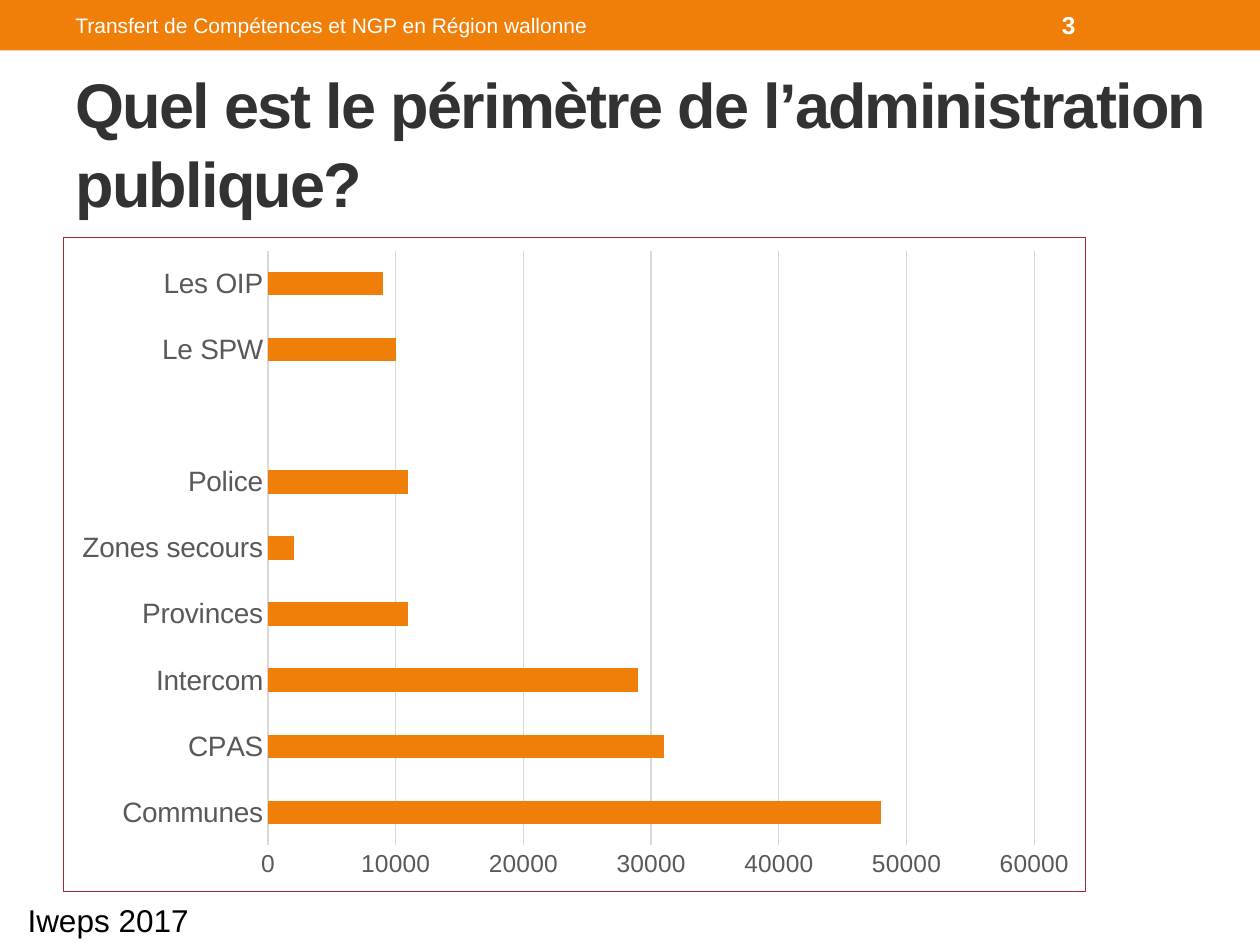
import dataclasses

import lxml.etree
import pptx
import pptx.chart.chart
import pptx.chart.data
import pptx.dml.color
import pptx.enum.chart
import pptx.enum.shapes
import pptx.enum.text
import pptx.oxml
import pptx.oxml.ns
import pptx.slide
import pptx.util

Inches = pptx.util.Inches
Pt = pptx.util.Pt

FONT = "Arial"
ORANGE = "F07F09"
WHITE = "FFFFFF"
GREY = "595959"
GRID = "D9D9D9"
BORDER = "9F2936"


@dataclasses.dataclass(frozen=True)
class Area:
    """Place and size in inches."""

    left: float
    top: float
    width: float
    height: float

    def lengths(self) -> list[pptx.util.Length]:
        """Return the four measures as lengths."""
        return [Inches(value) for value in dataclasses.astuple(self)]


@dataclasses.dataclass(frozen=True)
class Staff:
    """One group of public employers and its head count."""

    label: str
    count: int | None


STAFF = [
    Staff("Communes", 48000),
    Staff("CPAS", 31000),
    Staff("Intercom", 29000),
    Staff("Provinces", 11000),
    Staff("Zones secours", 2000),
    Staff("Police", 11000),
    Staff("", None),
    Staff("Le SPW", 10000),
    Staff("Les OIP", 9000),
]


def color(value: str) -> pptx.dml.color.RGBColor:
    """Turn a hex string into a colour."""
    return pptx.dml.color.RGBColor.from_string(value)


def add_text(page: pptx.slide.Slide, area: Area, text: str, *, size: float,
             fill: str, bold: bool = False, middle: bool = True,
             tracking: float = 0, spacing: float = 1) -> None:
    """Add a text box with one formatted paragraph."""
    frame = page.shapes.add_textbox(*area.lengths()).text_frame
    frame.word_wrap = True
    anchors = pptx.enum.text.MSO_ANCHOR
    frame.vertical_anchor = anchors.MIDDLE if middle else anchors.TOP
    para = frame.paragraphs[0]
    para.line_spacing = spacing
    span = para.add_run()
    span.text = text
    span.font.name = FONT
    span.font.size = Pt(size)
    span.font.bold = bold
    span.font.color.rgb = color(fill)
    if tracking:
        span.font._element.set("spc", str(int(tracking * 100)))


def add_band(page: pptx.slide.Slide, area: Area) -> None:
    """Draw the coloured header band."""
    band = page.shapes.add_shape(
        pptx.enum.shapes.MSO_SHAPE.RECTANGLE, *area.lengths())
    band.shadow.inherit = False
    band.fill.solid()
    band.fill.fore_color.rgb = color(ORANGE)
    band.line.fill.background()


def style_axis(axis, size: float) -> None:
    """Set the labels of an axis and remove its ticks."""
    axis.major_tick_mark = pptx.enum.chart.XL_TICK_MARK.NONE
    axis.minor_tick_mark = pptx.enum.chart.XL_TICK_MARK.NONE
    font = axis.tick_labels.font
    font.name = FONT
    font.size = Pt(size)
    font.color.rgb = color(GREY)


def style_line(line, fill: str) -> None:
    """Give a line its colour and the common width."""
    line.color.rgb = color(fill)
    line.width = Pt(0.75)


def frame_chart(chart: pptx.chart.chart.Chart, plot: Area) -> None:
    """Add the chart border and place the plot by fractions of the chart."""
    names = pptx.oxml.ns.nsdecls("c", "a")
    body = chart._chartSpace.find(pptx.oxml.ns.qn("c:chart"))
    body.addnext(pptx.oxml.parse_xml(
        f'<c:spPr {names}><a:noFill/><a:ln w="{Pt(0.75)}"><a:solidFill>'
        f'<a:srgbClr val="{BORDER}"/></a:solidFill></a:ln></c:spPr>'))
    region = body.find(pptx.oxml.ns.qn("c:plotArea"))
    for old in region.findall(pptx.oxml.ns.qn("c:layout")):
        region.remove(old)
    layout = pptx.oxml.parse_xml(f"<c:layout {names}/>")
    manual = lxml.etree.SubElement(layout, pptx.oxml.ns.qn("c:manualLayout"))
    settings = {"layoutTarget": "inner", "xMode": "edge", "yMode": "edge",
                "x": plot.left, "y": plot.top, "w": plot.width, "h": plot.height}
    for name, value in settings.items():
        lxml.etree.SubElement(
            manual, pptx.oxml.ns.qn(f"c:{name}")).set("val", str(value))
    region.insert(0, layout)


def add_staff_chart(page: pptx.slide.Slide, area: Area) -> None:
    """Add the bar chart of head counts."""
    data = pptx.chart.data.CategoryChartData()
    data.categories = [staff.label for staff in STAFF]
    data.add_series("Series 1", [staff.count for staff in STAFF])
    chart = page.shapes.add_chart(
        pptx.enum.chart.XL_CHART_TYPE.BAR_CLUSTERED, *area.lengths(), data).chart
    chart.has_legend = False
    chart.has_title = False
    chart.font.name = FONT
    chart.font.size = Pt(10)
    chart.font.color.rgb = color("000000")

    bars = chart.plots[0]
    bars.gap_width = 182
    bars.vary_by_categories = False
    bars.series[0].format.fill.solid()
    bars.series[0].format.fill.fore_color.rgb = color(ORANGE)

    style_axis(chart.category_axis, 16)
    style_line(chart.category_axis.format.line, GRID)
    values = chart.value_axis
    style_axis(values, 14)
    values.minimum_scale = 0
    values.maximum_scale = 60000
    values.major_unit = 10000
    values.format.line.fill.background()
    values.has_major_gridlines = True
    style_line(values.major_gridlines.format.line, GRID)
    frame_chart(chart, Area(0.2, 0.02, 0.75, 0.91))


def main() -> None:
    """Build the slide and save the deck."""
    deck = pptx.Presentation()
    deck.slide_width = Inches(10)
    deck.slide_height = Inches(7.5)
    page = deck.slides.add_slide(deck.slide_layouts[6])
    add_band(page, Area(0, 0, 10, 0.4))
    add_text(page, Area(0.5, 0.58, 9.3, 1.08),
             "Quel est le périmètre de l’administration publique?",
             size=36, fill="323232", bold=True, tracking=-1, spacing=1.05)
    add_text(page, Area(8.33, 0.02, 1.17, 0.36), "3",
             size=14, fill=WHITE, bold=True)
    add_text(page, Area(0.5, 0.02, 4.66, 0.36),
             "Transfert de Compétences et NGP en Région wallonne",
             size=12, fill=WHITE)
    add_staff_chart(page, Area(0.5, 1.88, 8.12, 5.2))
    add_text(page, Area(0.12, 7.1, 1.81, 0.4), "Iweps 2017",
             size=18, fill="000000", middle=False)
    deck.save("out.pptx")


if __name__ == "__main__":
    main()
